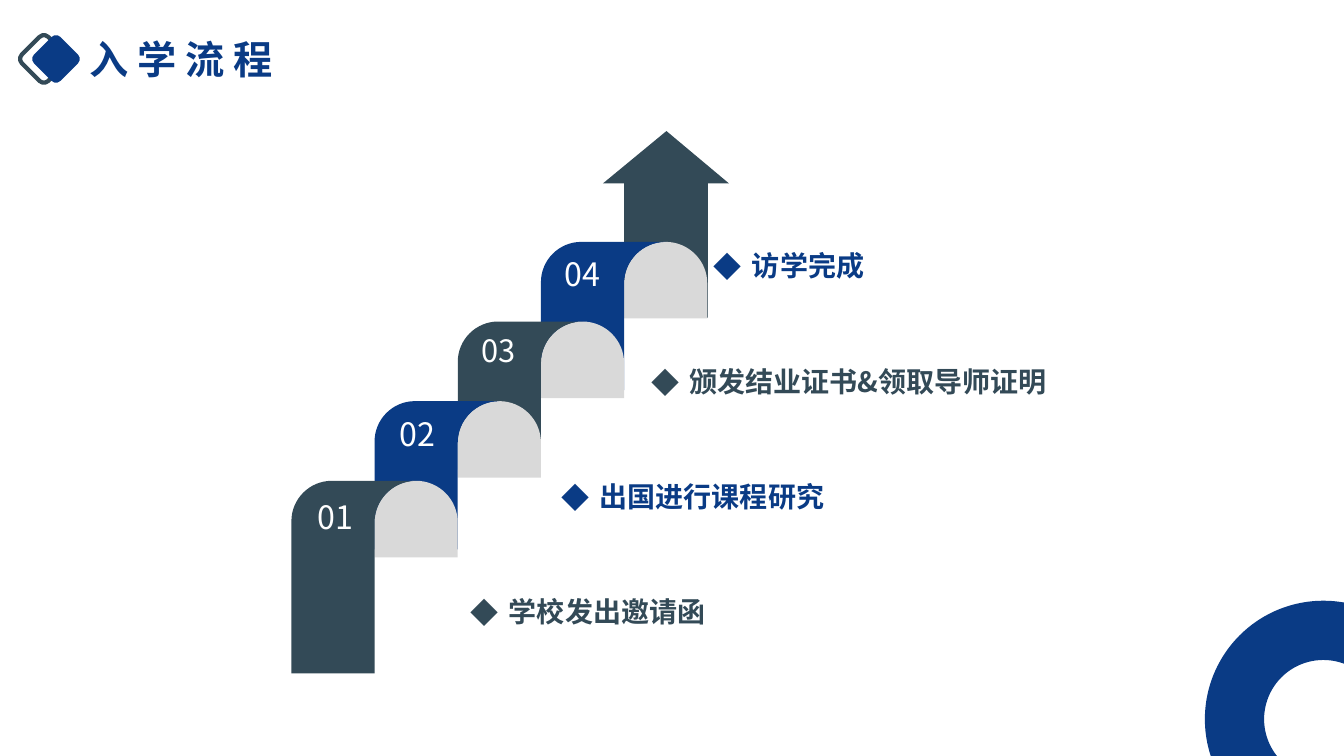
from dataclasses import dataclass

from lxml import etree
from pptx import Presentation
from pptx.dml.color import RGBColor
from pptx.enum.shapes import MSO_SHAPE as Preset
from pptx.enum.text import MSO_ANCHOR as Anchor, MSO_AUTO_SIZE as AutoSize, PP_ALIGN as Align
from pptx.oxml.ns import qn
from pptx.util import Inches, Pt

BLUE = RGBColor(0x0A, 0x3B, 0x85)
SLATE = RGBColor(0x33, 0x4A, 0x57)
GREY = RGBColor(0xD9, 0xD9, 0xD9)
WHITE = RGBColor(0xFF, 0xFF, 0xFF)
FONT = "Noto Sans CJK SC"

# Staircase measures in inches
FIRST_LEFT, FIRST_TOP = 2.89, 4.77
STEP_RIGHT, STEP_UP = 3.3 / 4, 0.79
FOLD_RADIUS = STEP_RIGHT / 2
CORNER_RADIUS = 0.4
FOLD_HEIGHT = 0.76
LABEL_BOTTOM_TOP, LABEL_UP = 5.85, 3.43 / 3
ROUNDNESS = 0.55

Point = tuple[float, float]
Segment = tuple[Point, ...]  # one point for a line, three for a curve


@dataclass(frozen=True)
class Step:
    number: str
    label: str
    color: RGBColor
    height: float
    number_at: Point
    number_size: int
    label_left: float
    label_width: float


STEPS = [
    Step("01", "学校发出邀请函", SLATE, 1.91, (3.15, 4.93), 23, 4.57, 2.8),
    Step("02", "出国进行课程研究", BLUE, 1.47, (3.96, 4.11), 23, 5.47, 3.73),
    Step("03", "颁发结业证书&领取导师证明", SLATE, 1.47, (4.78, 3.29), 22, 6.36, 4.5),
    Step("04", "访学完成", BLUE, 1.47, (5.6, 2.52), 23, 6.98, 2.39),
]


def toward(start: Point, goal: Point) -> Point:
    return tuple(a + ROUNDNESS * (b - a) for a, b in zip(start, goal))


def quarter(start: Point, corner: Point, end: Point) -> Segment:
    """A quarter circle that rounds off the corner."""
    return toward(start, corner), toward(end, corner), end


def paint(shape, color: RGBColor) -> None:
    shape.shadow.inherit = False
    shape.fill.solid()
    shape.fill.fore_color.rgb = color
    shape.line.fill.background()


def add_outline(shapes, start: Point, segments: list[Segment], color: RGBColor) -> None:
    builder = shapes.build_freeform(Inches(start[0]), Inches(start[1]))
    builder.add_line_segments(
        [(Inches(x), Inches(y)) for segment in segments for x, y in segment], close=True
    )
    outline = builder.convert_to_shape()
    paint(outline, color)
    # Join the three points of each curve into one Bezier segment
    lines = iter(list(outline._element.iter(qn("a:lnTo"))))
    for segment in segments:
        first, *others = [next(lines) for _ in segment]
        if others:
            first.tag = qn("a:cubicBezTo")
        for line in others:
            first.append(line[0])
            line.getparent().remove(line)


def add_preset(shapes, preset: Preset, left: float, top: float, side: float):
    return shapes.add_shape(preset, Inches(left), Inches(top), Inches(side), Inches(side))


def write(paragraph, text: str, size: int, color: RGBColor, bold: bool) -> None:
    run = paragraph.add_run()
    run.text = text
    run.font.name = FONT
    run.font.size = Pt(size)
    run.font.bold = bold
    run.font.color.rgb = color
    etree.SubElement(run.font._element, qn("a:ea"), typeface=FONT)


def add_text_frame(shapes, left: float, top: float, width: float, height: float, wrap: bool):
    box = shapes.add_textbox(Inches(left), Inches(top), Inches(width), Inches(height))
    box.text_frame.word_wrap = wrap
    box.text_frame.auto_size = AutoSize.SHAPE_TO_FIT_TEXT
    return box.text_frame


def add_step_shapes(shapes, step: Step, index: int) -> None:
    left, top = FIRST_LEFT + index * STEP_RIGHT, FIRST_TOP - index * STEP_UP
    inner, right = left + STEP_RIGHT, left + 2 * STEP_RIGHT
    bend, shoulder = top + FOLD_RADIUS, top + CORNER_RADIUS
    fold_bottom, bottom = top + FOLD_HEIGHT, top + step.height
    crest = (inner + FOLD_RADIUS, top)
    add_outline(shapes, (right, fold_bottom), [
        ((inner, fold_bottom),),
        ((inner, bend),),
        quarter((inner, bend), (inner, top), crest),
        quarter(crest, (right, top), (right, bend)),
    ], GREY)
    add_outline(shapes, (inner, bottom), [
        ((left, bottom),),
        ((left, shoulder),),
        quarter((left, shoulder), (left, top), (left + CORNER_RADIUS, top)),
        (crest,),
        quarter(crest, (inner, top), (inner, bend)),
    ], step.color)


def add_number(shapes, step: Step) -> None:
    frame = add_text_frame(shapes, *step.number_at, 0.38, 0.39, wrap=False)
    frame.margin_left = frame.margin_right = frame.margin_top = frame.margin_bottom = 0
    write(frame.paragraphs[0], step.number, step.number_size, WHITE, bold=False)


def add_label(shapes, step: Step, index: int) -> None:
    top = LABEL_BOTTOM_TOP - index * LABEL_UP
    frame = add_text_frame(shapes, step.label_left, top, step.label_width, 0.44, wrap=True)
    paragraph = frame.paragraphs[0]
    properties = paragraph._p.get_or_add_pPr()
    properties.set("marL", str(Inches(0.38)))
    properties.set("indent", str(-Inches(0.38)))
    etree.SubElement(properties, qn("a:buFont"), typeface=FONT)
    etree.SubElement(properties, qn("a:buChar"), char="◆")
    write(paragraph, step.label, 20, step.color, bold=True)


def main() -> None:
    deck = Presentation()
    deck.slide_width, deck.slide_height = Inches(13.33), Inches(7.5)
    slide = deck.slides.add_slide(deck.slide_layouts[5])
    shapes = slide.shapes

    # Corner ring
    paint(add_preset(shapes, Preset.DONUT, 11.95, 5.96, 2.35), BLUE)

    # Heading with its two diamonds
    hollow_diamond = add_preset(shapes, Preset.ROUNDED_RECTANGLE, 0.25, 0.4, 0.37)
    hollow_diamond.shadow.inherit = False
    hollow_diamond.fill.background()
    hollow_diamond.line.color.rgb = SLATE
    hollow_diamond.line.width = Pt(3)
    solid_diamond = add_preset(shapes, Preset.ROUNDED_RECTANGLE, 0.37, 0.4, 0.37)
    paint(solid_diamond, BLUE)
    hollow_diamond.rotation = solid_diamond.rotation = 45

    heading = shapes.title
    heading.left, heading.top = Inches(0.79), Inches(0.3)
    heading.width, heading.height = Inches(2.1), Inches(0.57)
    heading.text_frame.word_wrap = False
    heading.text_frame.auto_size = AutoSize.NONE
    heading.text_frame.vertical_anchor = Anchor.MIDDLE
    heading_line = heading.text_frame.paragraphs[0]
    heading_line.alignment = Align.LEFT
    write(heading_line, "入 学 流 程", 28, BLUE, bold=True)

    # Arrow, then the steps from the top down so lower ones overlap
    arrow_corners = [(6.61, 1.3), (5.98, 1.82), (6.19, 1.82),
                     (6.19, 3.15), (7.02, 3.15), (7.02, 1.82)]
    add_outline(shapes, (7.23, 1.82), [(corner,) for corner in arrow_corners], SLATE)
    for index, step in reversed(list(enumerate(STEPS))):
        add_step_shapes(shapes, step, index)

    # Numbers and labels
    for index, step in enumerate(STEPS):
        add_number(shapes, step)
        add_label(shapes, step, index)

    deck.save("out.pptx")


if __name__ == "__main__":
    main()
